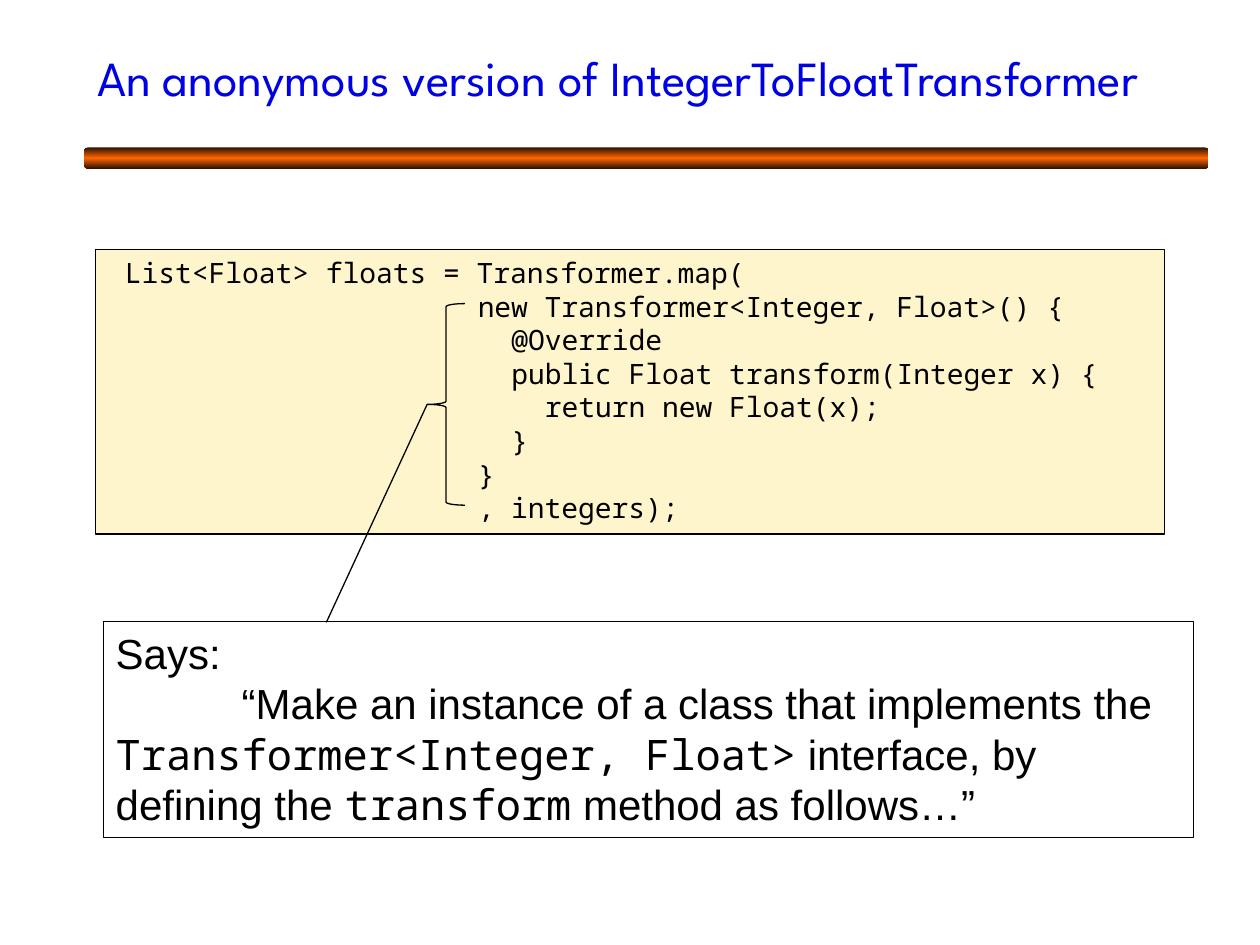
from copy import deepcopy

from lxml import etree
from pptx import Presentation
from pptx.dml.color import RGBColor
from pptx.enum.shapes import MSO_CONNECTOR, MSO_SHAPE
from pptx.enum.text import MSO_ANCHOR, PP_ALIGN
from pptx.oxml.ns import qn
from pptx.util import Inches, Pt

RECTANGLE = MSO_SHAPE.RECTANGLE
ROUNDED = MSO_SHAPE.ROUNDED_RECTANGLE
LEFT_BRACE = MSO_SHAPE.LEFT_BRACE
STRAIGHT = MSO_CONNECTOR.STRAIGHT
MIDDLE = MSO_ANCHOR.MIDDLE
LEFT = PP_ALIGN.LEFT

COLORS = {
    "title": "0000E5",
    "text": "000000",
    "line": "000000",
    "code": "FFF5CC",
    "note": "FFFFFF",
    "bar_edge": "2A1100",
    "bar_middle": "FF6600",
}
TITLE_FONT, BODY_FONT, CODE_FONT = "League Spartan", "Arial", "Noto Sans Mono"
CODE_SIZE = 16
CHARACTER_WIDTH = 0.6 * CODE_SIZE / 72  # inches per monospaced character

# Indent in characters, then the code
CODE_LINES = [
    (1, "List<Float> floats = Transformer.map("),
    (22, "new Transformer<Integer, Float>() {"),
    (24, "@Override"),
    (24, "public Float transform(Integer x) {"),
    (26, "return new Float(x);"),
    (24, "}"),
    (22, "}"),
    (22, ", integers);"),
]
# First-line indent in inches, then the runs
NOTE_PARAGRAPHS = [
    (0, [("Says:", BODY_FONT)]),
    (1, [
        ("“Make an instance of a class that implements the ", BODY_FONT),
        ("Transformer<Integer, Float>", CODE_FONT),
        (" interface, by defining the ", BODY_FONT),
        ("transform", CODE_FONT),
        (" method as follows…”", BODY_FONT),
    ]),
]


def rgb(name):
    return RGBColor.from_string(COLORS[name])


def add_span(para, text, font, size, color="text"):
    span = para.add_run()
    span.text = text
    span.font.name = font
    span.font.size = Pt(size)
    span.font.color.rgb = rgb(color)


def style_line(shape):
    shape.line.color.rgb = rgb("line")
    shape.line.width = Pt(0.75)


def add_outline(slide, kind, place, fill=None):
    shape = slide.shapes.add_shape(kind, *map(Inches, place))
    shape.shadow.inherit = False
    style_line(shape)
    if fill:
        shape.fill.solid()
        shape.fill.fore_color.rgb = rgb(fill)
    else:
        shape.fill.background()
    return shape


def add_text_panel(slide, place, fill, size, paragraphs):
    """Add a filled box; each paragraph is (left margin, first indent, runs)."""
    frame = add_outline(slide, RECTANGLE, place, fill).text_frame
    frame.word_wrap = True
    frame.vertical_anchor = MSO_ANCHOR.TOP
    for number, (margin, indent, runs) in enumerate(paragraphs):
        para = frame.add_paragraph() if number else frame.paragraphs[0]
        para.alignment = LEFT
        properties = para._p.get_or_add_pPr()
        properties.set("marL", str(Inches(margin)))
        properties.set("indent", str(Inches(indent)))
        for text, font in runs:
            add_span(para, text, font, size)


def add_bar(slide):
    bar = slide.shapes.add_shape(
        ROUNDED, Inches(0.67), Inches(1.17), Inches(8.92), Inches(0.17))
    bar.adjustments[0] = 0.167
    bar.shadow.inherit = False
    bar.line.fill.background()
    bar.fill.gradient()
    bar.fill.gradient_angle = 90
    # A third stop turns the default gradient into edge, middle, edge
    stop_list = bar._element.spPr.find(qn("a:gradFill")).find(qn("a:gsLst"))
    stop_list.insert(1, deepcopy(stop_list[0]))
    names = ("bar_edge", "bar_middle", "bar_edge")
    for stop, name, position in zip(bar.fill.gradient_stops, names, (0, 0.5, 1)):
        stop.color.rgb = rgb(name)
        stop.position = position


def set_title(slide, text):
    title = slide.shapes.title
    title.left, title.top = Inches(0.67), Inches(0.11)
    title.width, title.height = Inches(8.92), Inches(1)
    title.text_frame.vertical_anchor = MIDDLE
    para = title.text_frame.paragraphs[0]
    para.alignment = LEFT
    add_span(para, text, TITLE_FONT, 28, "title")


def add_pointer(slide, brace, end):
    tip = (brace.left, brace.top + brace.height // 2)
    pointer = slide.shapes.add_connector(STRAIGHT, *tip, *map(Inches, end))
    pointer.begin_connect(brace, 1)
    style_line(pointer)
    etree.SubElement(pointer._element.spPr, qn("a:effectLst"))


def main():
    deck = Presentation()
    deck.slide_width, deck.slide_height = Inches(10), Inches(7.5)
    slide = deck.slides.add_slide(deck.slide_layouts[5])

    # Heading
    add_bar(slide)
    set_title(slide, "An anonymous version of IntegerToFloatTransformer")

    # Explanation and code
    note = [(0, indent, runs) for indent, runs in NOTE_PARAGRAPHS]
    add_text_panel(slide, (0.82, 4.93, 8.65, 1.72), "note", 24, note)
    code = [(count * CHARACTER_WIDTH, 0, [(text, CODE_FONT)])
            for count, text in CODE_LINES]
    add_text_panel(slide, (0.76, 1.98, 8.48, 2.26), "code", CODE_SIZE, code)

    # Brace around the anonymous class, tied to the explanation
    brace = add_outline(slide, LEFT_BRACE, (3.39, 2.41, 0.3, 1.6))
    add_pointer(slide, brace, (2.59, 4.94))

    deck.save("out.pptx")


if __name__ == "__main__":
    main()
